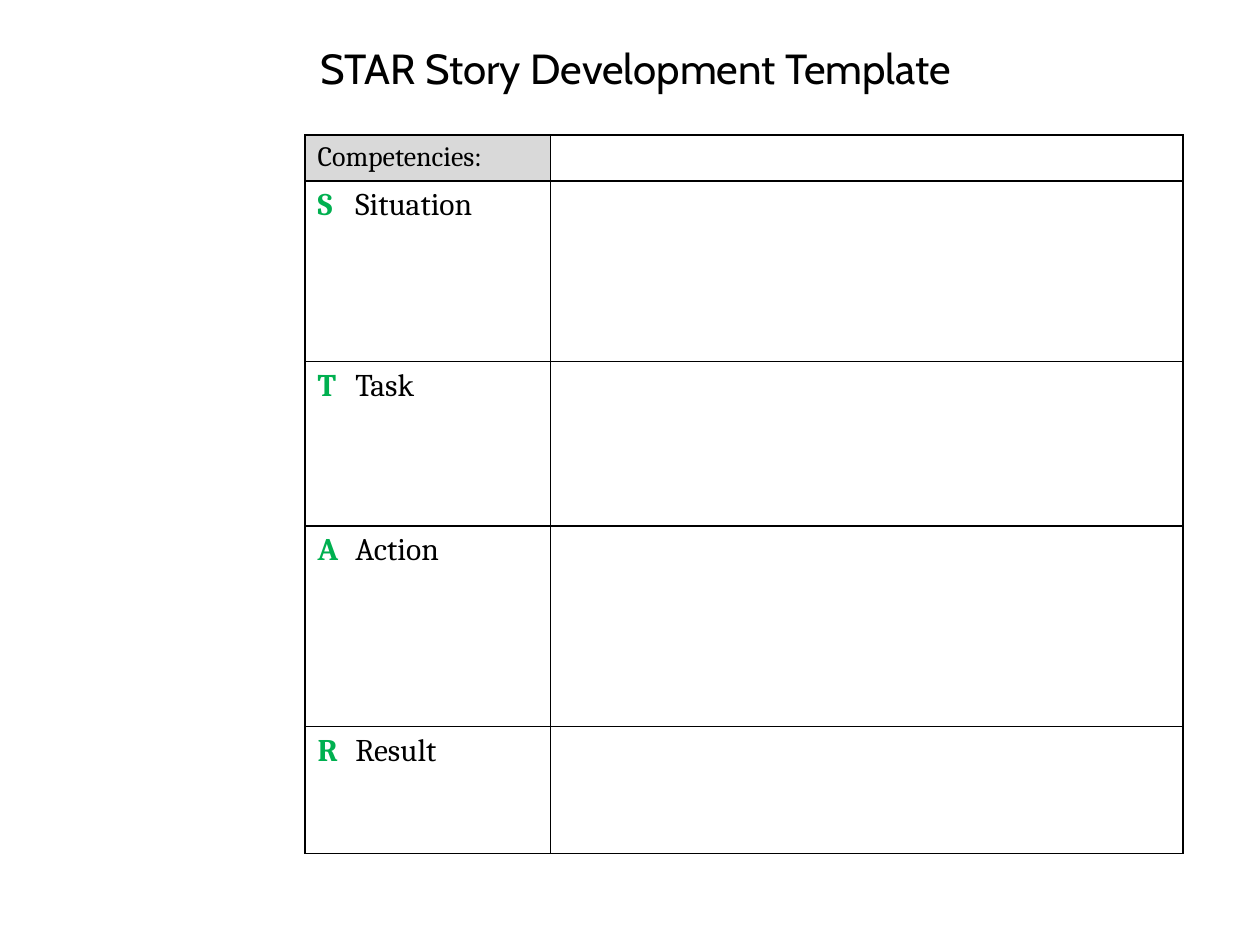
"""Build a slide with a blank STAR story worksheet."""
from lxml import etree
from pptx import Presentation
from pptx.dml.color import RGBColor
from pptx.enum.text import MSO_ANCHOR, PP_ALIGN
from pptx.oxml.ns import qn
from pptx.util import Cm, Pt

CENTER = PP_ALIGN.CENTER
MIDDLE = MSO_ANCHOR.MIDDLE
TITLE_ONLY = 5
COLORS = {"text": "000000", "letter": "00B050", "header": "D9D9D9", "border": "000000"}
COLUMN_WIDTHS = [4.95, 12.75]
HEADER_HEIGHT = 0.93
STEPS = [("S", "Situation", 3.64), ("T", "Task", 3.31),
         ("A", "Action", 4.05), ("R", "Result", 2.56)]


def format_run(run, font, size, color, bold=False):
    run.font.name = font
    run.font.size = Pt(size)
    run.font.bold = bold
    run.font.color.rgb = RGBColor.from_string(COLORS[color])


def add_title(slide, text):
    title = slide.shapes.title
    title.left, title.top, title.width, title.height = Cm(1.7), Cm(0.64), Cm(22.23), Cm(1.45)
    frame = title.text_frame
    frame.text = text
    frame.vertical_anchor = MIDDLE
    frame.paragraphs[0].alignment = CENTER
    format_run(frame.paragraphs[0].runs[0], "Cabin", 24, "text")


def set_borders(cell):
    properties = cell._tc.get_or_add_tcPr()
    for position, side in enumerate(("a:lnL", "a:lnR", "a:lnT", "a:lnB")):
        line = etree.Element(qn(side), w=str(Pt(1)))
        fill = etree.SubElement(line, qn("a:solidFill"))
        etree.SubElement(fill, qn("a:srgbClr"), val=COLORS["border"])
        properties.insert(position, line)


def set_tab_stop(paragraph, position):
    stops = etree.SubElement(paragraph._p.get_or_add_pPr(), qn("a:tabLst"))
    etree.SubElement(stops, qn("a:tab"), pos=str(position), algn="l")


def fill_step(cell, letter, word):
    paragraph = cell.text_frame.paragraphs[0]
    set_tab_stop(paragraph, Cm(0.76))
    for text, color, bold in ((letter, "letter", True), (f"\t{word}", "text", False)):
        run = paragraph.add_run()
        run.text = text
        format_run(run, "Cambria", 18, color, bold)


def add_worksheet(slide):
    heights = [HEADER_HEIGHT] + [height for _, _, height in STEPS]
    worksheet = slide.shapes.add_table(
        len(heights), len(COLUMN_WIDTHS), Cm(6.15), Cm(2.72),
        Cm(sum(COLUMN_WIDTHS)), Cm(sum(heights))).table
    worksheet.first_row = worksheet.horz_banding = False
    for column, width in zip(worksheet.columns, COLUMN_WIDTHS):
        column.width = Cm(width)
    for row, height in zip(worksheet.rows, heights):
        row.height = Cm(height)
    for cell in worksheet.iter_cells():
        cell.fill.background()
        set_borders(cell)

    header = worksheet.cell(0, 0)
    header.text_frame.text = "Competencies:"
    format_run(header.text_frame.paragraphs[0].runs[0], "Cambria", 16, "text")
    header.fill.solid()
    header.fill.fore_color.rgb = RGBColor.from_string(COLORS["header"])
    answer = worksheet.cell(0, 1)
    answer.margin_top = answer.margin_bottom = Cm(0)
    for index, (letter, word, _) in enumerate(STEPS, start=1):
        fill_step(worksheet.cell(index, 0), letter, word)


def main():
    presentation = Presentation()
    presentation.slide_width, presentation.slide_height = Cm(25.4), Cm(19.05)
    slide = presentation.slides.add_slide(presentation.slide_layouts[TITLE_ONLY])
    add_title(slide, "STAR Story Development Template")
    add_worksheet(slide)
    presentation.save("out.pptx")


if __name__ == "__main__":
    main()
